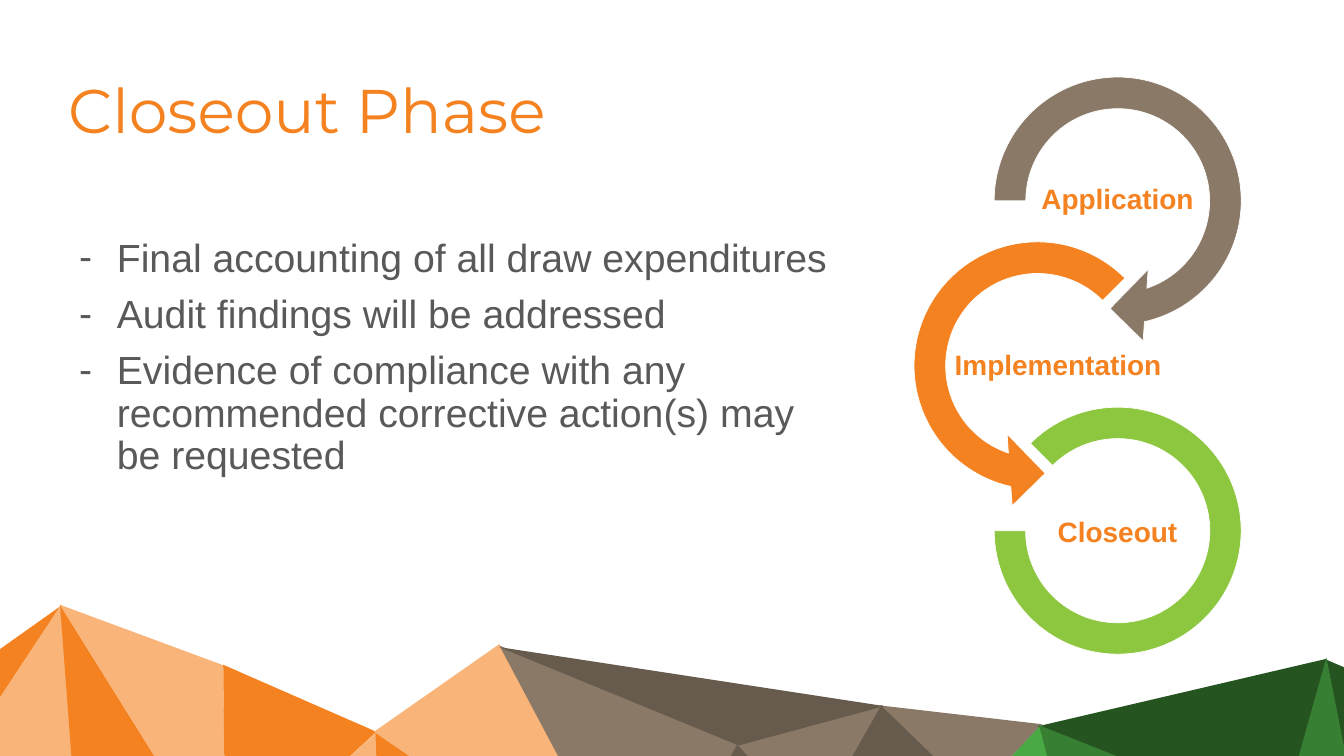
from pptx import Presentation
from pptx import util as u
from pptx.dml.color import RGBColor
from pptx.enum import shapes, text
from lxml import etree

IN = u.Inches
ORANGE, PEACH = "F58220", "F9B479"
TAUPE, BROWN = "8A7967", "675B4D"
LIME, GREEN, LEAF, PINE = "8DC63F", "49A942", "377F32", "255421"
GREY, WHITE = "595959", "FFFFFF"


def rgb(code):
    return RGBColor.from_string(code)


def style(para, size, face, color, bold=False):
    para.line_spacing = 0.9
    for run in para.runs:
        run.font.size = u.Pt(size)
        run.font.name = face
        run.font.bold = bold
        run.font.color.rgb = rgb(color)


deck = Presentation()
deck.slide_width, deck.slide_height = IN(26.67), IN(15)
slide = deck.slides.add_slide(deck.slide_layouts[5])
parts = slide.shapes

# Mountain facets along the bottom, back to front
facets = [
    (ORANGE, [(1.24, 12), (0, 12.88), (0, 13.87)]),
    (PEACH, [(1.57, 16.63), (1.21, 12), (-0.03, 13.88), (-0.03, 16.63)]),
    (ORANGE, [(4.08, 16.63), (1.19, 12), (1.54, 16.63)]),
    (PEACH, [(4.47, 16.63), (4.43, 13.2), (1.19, 12), (4.08, 16.63)]),
    (ORANGE, [(5.18, 16.63), (7.47, 14.52), (4.43, 13.19), (4.47, 16.63)]),
    (PEACH, [(7.55, 16.63), (7.47, 14.53), (5.18, 16.63)]),
    (ORANGE, [(10.53, 16.63), (7.45, 14.53), (7.53, 16.63)]),
    (PEACH, [(11.95, 16.63), (9.91, 12.78), (7.42, 14.52), (10.5, 16.63)]),
    (TAUPE, [(13.62, 16.65), (14.66, 14.76), (9.91, 12.81), (11.95, 16.65)]),
    (TAUPE, [(14.62, 14.78), (16.1, 16.47), (17.51, 13.99)]),
    (BROWN, [(16.09, 16.46), (19.35, 15.79), (17.49, 13.99)]),
    (TAUPE, [(17.49, 14), (19.34, 15.79), (20.68, 14.37)]),
    (GREEN, [(21.24, 16.7), (20.65, 14.39), (19.32, 15.82), (20.28, 16.7)]),
    (PINE, [(20.6, 14.41), (25.41, 16.32), (26.33, 13.07)]),
    (LEAF, [(24.42, 16.7), (25.43, 16.3), (20.62, 14.39), (21.22, 16.7)]),
    (PINE, [(26.81, 13.3), (26.32, 13.09), (26.81, 15.56)]),
    (LEAF, [(26.81, 16.7), (26.81, 15.52), (26.32, 13.05), (25.41, 16.3),
            (26, 16.7)]),
    (BROWN, [(9.91, 12.84), (17.55, 14.01), (14.66, 14.79)]),
    (BROWN, [(15.72, 16.67), (16.12, 16.46), (14.63, 14.77), (13.59, 16.67)]),
]
for color, points in facets:
    spots = [(IN(x), IN(y)) for x, y in points]
    pen = parts.build_freeform(*spots[0])
    pen.add_line_segments(spots[1:], close=True)
    facet = pen.convert_to_shape()
    facet.shadow.inherit = False
    facet.fill.solid()
    facet.fill.fore_color.rgb = rgb(color)
    facet.line.fill.background()

# Title
title = parts.title
title.left, title.top, title.width, title.height = IN(1.25), IN(0.8), IN(23), IN(2.9)
frame = title.text_frame
frame.text = "Closeout Phase"
frame.auto_size = text.MSO_AUTO_SIZE.NONE
frame.vertical_anchor = text.MSO_ANCHOR.MIDDLE
frame.paragraphs[0].alignment = text.PP_ALIGN.LEFT
style(frame.paragraphs[0], 88, "Montserrat", ORANGE)

# Dashed list
body = parts.add_textbox(IN(1.47), IN(4.68), IN(15.48), IN(6.43))
frame = body.text_frame
frame.word_wrap = True
frame.text = "\n".join([
    "Final accounting of all draw expenditures",
    "Audit findings will be addressed",
    "Evidence of compliance with any recommended corrective action(s) may be requested",
])
for para in frame.paragraphs:
    style(para, 56, "Arial", GREY)
    para.space_before = u.Pt(20)
    props = para._p.get_or_add_pPr()
    props.set("marL", str(IN(0.75)))
    props.set("indent", str(-IN(0.75)))
    ns = props.nsmap["a"]
    etree.SubElement(props, f"{{{ns}}}buFont", typeface="Arial")
    etree.SubElement(props, f"{{{ns}}}buChar", char="-")

# Chain of phases: kind, box, adjustments, colour, then label and its box
kinds = shapes.MSO_SHAPE
phases = [
    (kinds.CIRCULAR_ARROW, (19.33, 1.13, 5.7, 5.71),
     (0.11, 11.423, 45, 108, 0.125), TAUPE,
     "Application", (20.59, 3.19, 3.17, 1.58)),
    (kinds.LEFT_CIRCULAR_ARROW, (17.74, 4.4, 5.7, 5.71),
     (0.11, 11.423, 63, 189, 0.125), ORANGE,
     "Implementation", (18.56, 6.48, 4.87, 1.58)),
    (kinds.BLOCK_ARC, (19.73, 8.08, 4.9, 4.9),
     (135, 108, 0.127), LIME,
     "Closeout", (20.59, 9.79, 3.17, 1.58)),
]
for kind, box, turns, color, name, place in phases:
    ring = parts.add_shape(kind, *map(IN, box))
    for i, turn in enumerate(turns):
        ring.adjustments[i] = turn
    ring.shadow.inherit = False
    ring.fill.solid()
    ring.fill.fore_color.rgb = rgb(color)
    ring.line.color.rgb = rgb(WHITE)
    ring.line.width = u.Pt(1)

    label = parts.add_textbox(*map(IN, place))
    frame = label.text_frame
    frame.word_wrap = True
    frame.margin_left = frame.margin_right = IN(0.03)
    frame.margin_top = frame.margin_bottom = IN(0.03)
    frame.vertical_anchor = text.MSO_ANCHOR.MIDDLE
    frame.text = name
    frame.paragraphs[0].alignment = text.PP_ALIGN.CENTER
    style(frame.paragraphs[0], 40, "Arial", ORANGE, bold=True)

deck.save("out.pptx")
